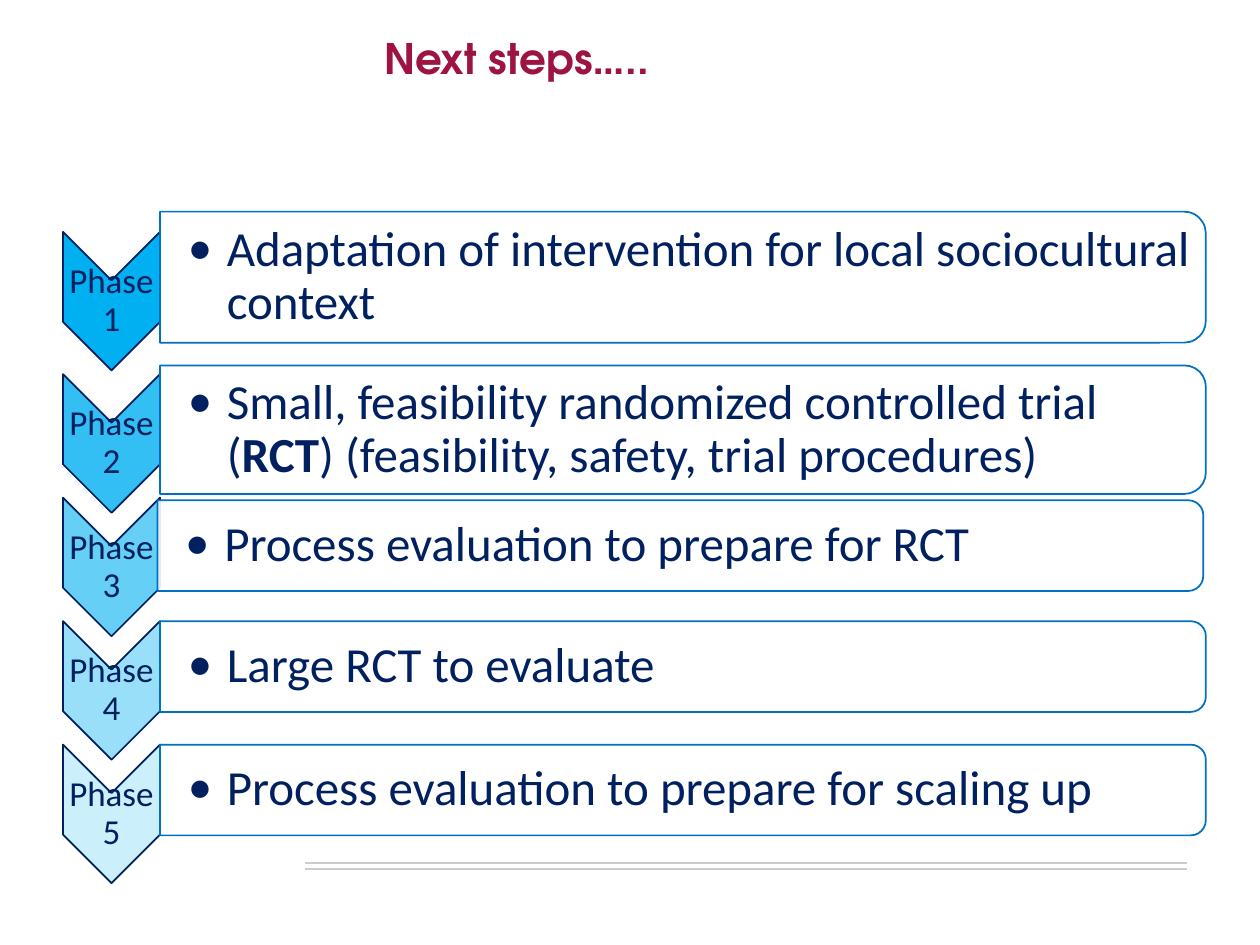
from dataclasses import dataclass

from lxml import etree
from pptx import Presentation
from pptx.dml.color import RGBColor
from pptx.enum.shapes import MSO_CONNECTOR, MSO_SHAPE
from pptx.enum.text import MSO_ANCHOR, PP_ALIGN
from pptx.oxml.ns import qn
from pptx.util import Inches, Pt


@dataclass(frozen=True)
class Theme:
    title: str = "9E1440"
    text: str = "002060"
    chevron: str = "00B0F0"
    panel: str = "FFFFFF"
    panel_line: str = "0070C0"
    rule: str = "CEC9CE"
    title_font: str = "TeX Gyre Adventor"
    body_font: str = "Calibri"
    title_size: int = 24
    phase_size: int = 20
    body_size: int = 28


THEME = Theme()

PHASES = [
    (1.84, (1.27, 1.68, 8.3, 1.04), ["Adaptation of intervention for local sociocultural context"]),
    (2.97, (1.27, 2.9, 8.3, 1.02),
     ["Small, feasibility randomized controlled trial (", "RCT",
      ") (feasibility, safety, trial procedures)"]),
    (3.95, (1.25, 3.97, 8.3, 0.72), ["Process evaluation to prepare for RCT"]),
    (4.93, (1.27, 4.93, 8.3, 0.72), ["Large RCT to evaluate"]),
    (5.91, (1.27, 5.91, 8.3, 0.72), ["Process evaluation to prepare for scaling up"]),
]


def add_text(slide, box, runs, font, size, color, inset, anchor=MSO_ANCHOR.MIDDLE):
    tf = slide.shapes.add_textbox(*map(Inches, box)).text_frame
    tf.word_wrap = True
    tf.vertical_anchor = anchor
    left, other = inset
    tf.margin_left = Inches(left)
    tf.margin_top = tf.margin_right = tf.margin_bottom = Inches(other)
    p = tf.paragraphs[0]
    for text in runs:
        r = p.add_run()
        r.text = text
        r.font.name = font
        r.font.size = Pt(size)
        r.font.color.rgb = RGBColor.from_string(color)
    return p


def add_turned_shape(slide, kind, box, fill, line, opacity):
    x, y, w, h = box
    left, top = x + (w - h) / 2, y + (h - w) / 2
    sp = slide.shapes.add_shape(kind, Inches(left), Inches(top), Inches(h), Inches(w))
    sp.rotation = 90
    sp.shadow.inherit = False
    sp.fill.solid()
    sp.fill.fore_color.rgb = RGBColor.from_string(fill)
    sp.line.color.rgb = RGBColor.from_string(line)
    sp.line.width = Pt(1)
    if opacity < 100:
        color = sp.fill._xPr.find(qn("a:solidFill"))[0]
        etree.SubElement(color, qn("a:alpha")).set("val", str(opacity * 1000))


def add_bullet(p, indent):
    pPr = p._p.get_or_add_pPr()
    pPr.set("marL", str(Inches(indent)))
    pPr.set("indent", str(-Inches(indent)))
    etree.SubElement(pPr, qn("a:buFont")).set("typeface", THEME.body_font)
    etree.SubElement(pPr, qn("a:buChar")).set("char", "•")


def add_title(slide, box):
    p = add_text(slide, box, ["Next steps….."], THEME.title_font, THEME.title_size,
                 THEME.title, (0.1, 0.05), MSO_ANCHOR.TOP)
    p.runs[0].font.bold = True


def add_footer_rules(slide, box):
    x, y, w, h = box
    for line_y in (y, y + h):
        s = slide.shapes.add_connector(
            MSO_CONNECTOR.STRAIGHT, Inches(x), Inches(line_y), Inches(x + w), Inches(line_y))
        s.line.color.rgb = RGBColor.from_string(THEME.rule)
        s.line.width = Pt(1.25)
        etree.SubElement(s._element.spPr, qn("a:effectLst"))


def add_phase_marker(slide, box, number, opacity):
    x, y, w, h = box
    add_turned_shape(slide, MSO_SHAPE.CHEVRON, box, THEME.chevron, THEME.text, opacity)
    label_h = h - w
    p = add_text(slide, (x, y + w / 2, w, label_h), [f"Phase {number}"],
                 THEME.body_font, THEME.phase_size, THEME.text, (0.01, 0.01))
    p.alignment = PP_ALIGN.CENTER
    p.line_spacing = 0.9


def add_phase_panel(slide, box, runs):
    x, y, w, h = box
    add_turned_shape(slide, MSO_SHAPE.ROUND_2_SAME_RECTANGLE, box,
                     THEME.panel, THEME.panel_line, 90)
    pad = 0.05
    p = add_text(slide, (x, y + pad, w - pad, h - 2 * pad), runs,
                 THEME.body_font, THEME.body_size, THEME.text, (0.22, 0.02))
    add_bullet(p, 0.31)
    p.line_spacing = 0.9
    for r in p.runs:
        r.font.bold = r.text == "RCT"


def main():
    prs = Presentation()
    prs.slide_width, prs.slide_height = Inches(10), Inches(7.5)
    slide = prs.slides.add_slide(prs.slide_layouts[6])
    add_footer_rules(slide, (2.42, 6.85, 7, 0.05))
    add_title(slide, (2.95, 0.21, 7, 1.25))
    for number, (marker_top, panel, runs) in enumerate(PHASES, 1):
        add_phase_marker(slide, (0.5, marker_top, 0.77, 1.1), number, 120 - 20 * number)
        add_phase_panel(slide, panel, runs)
    prs.save("out.pptx")


if __name__ == "__main__":
    main()
